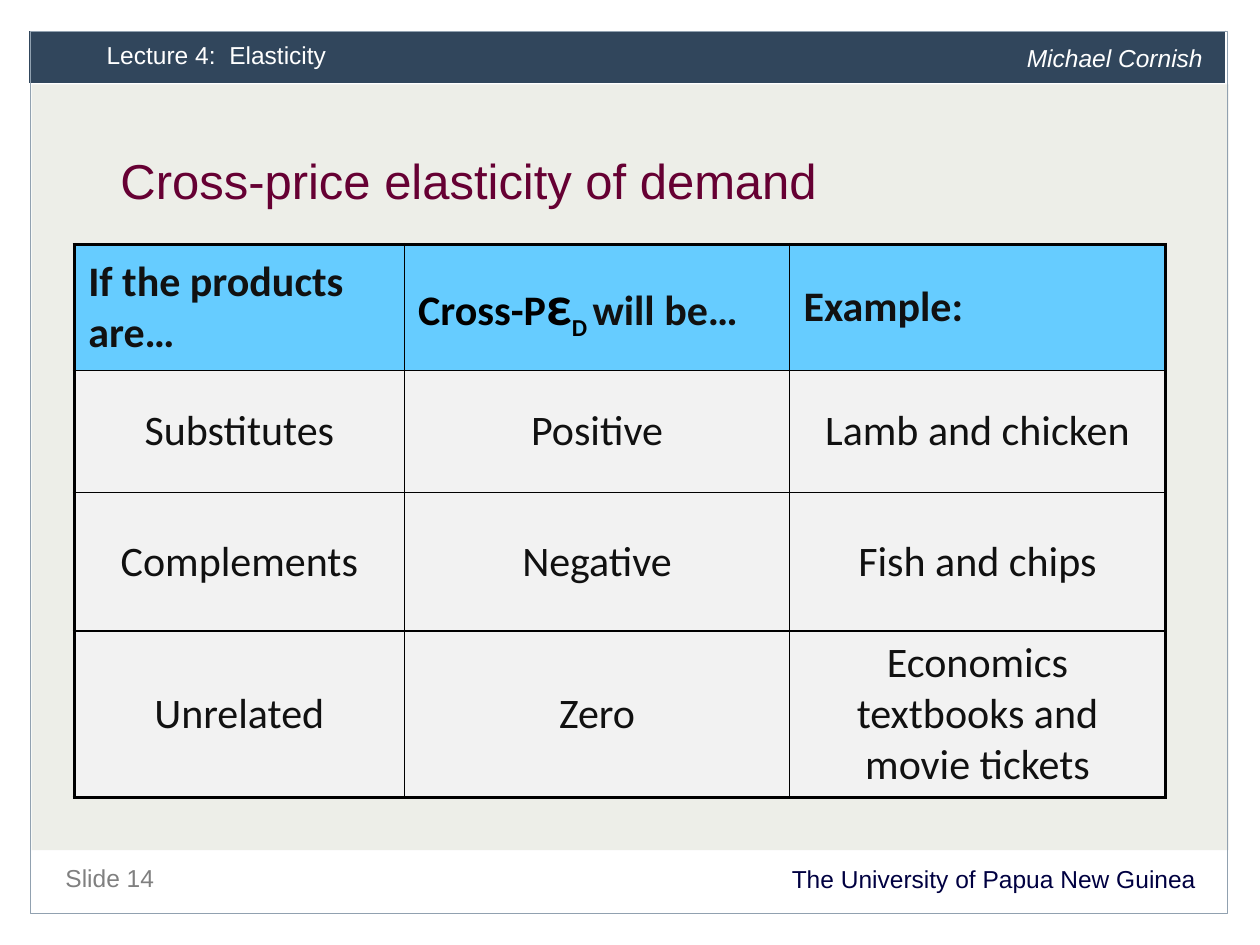
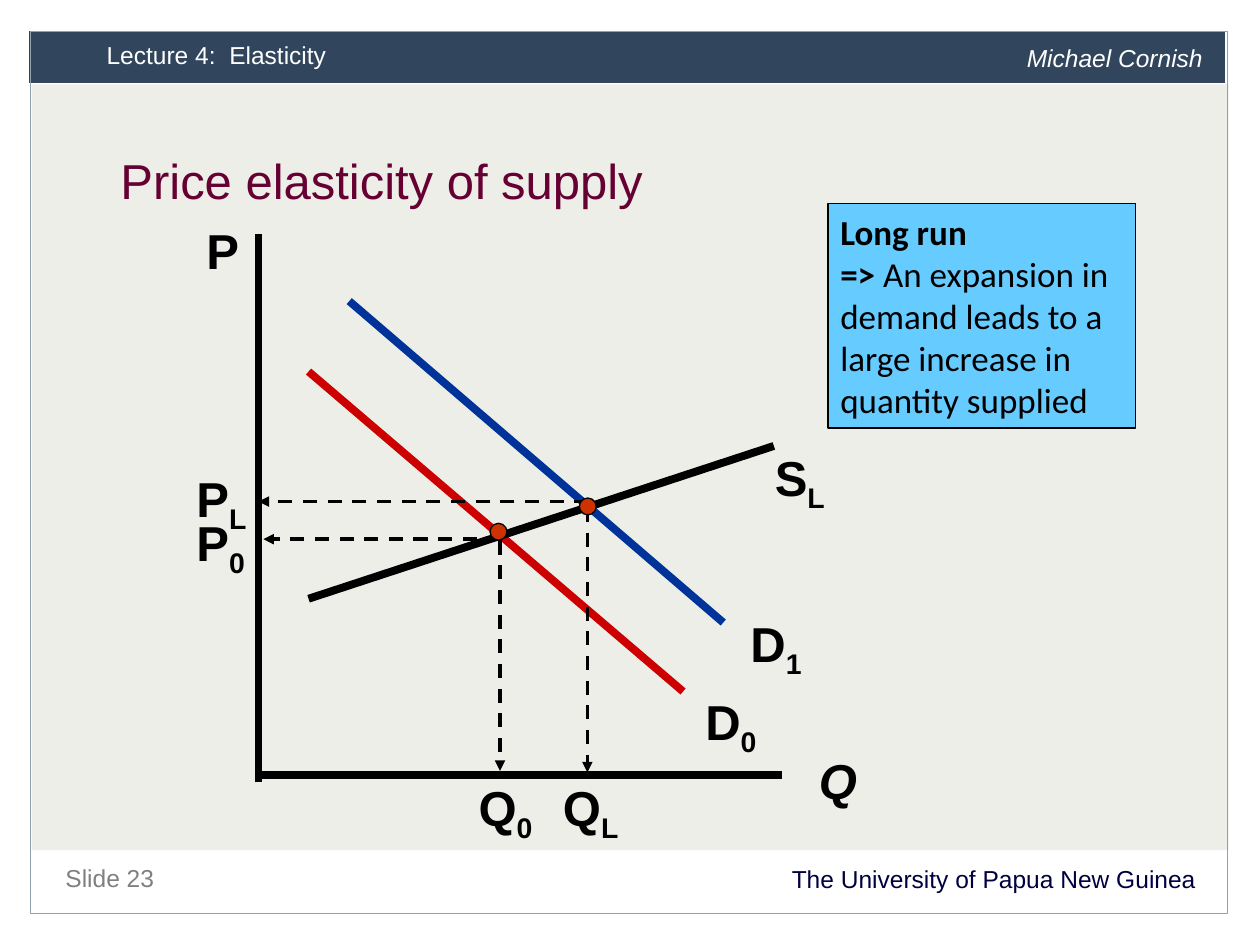
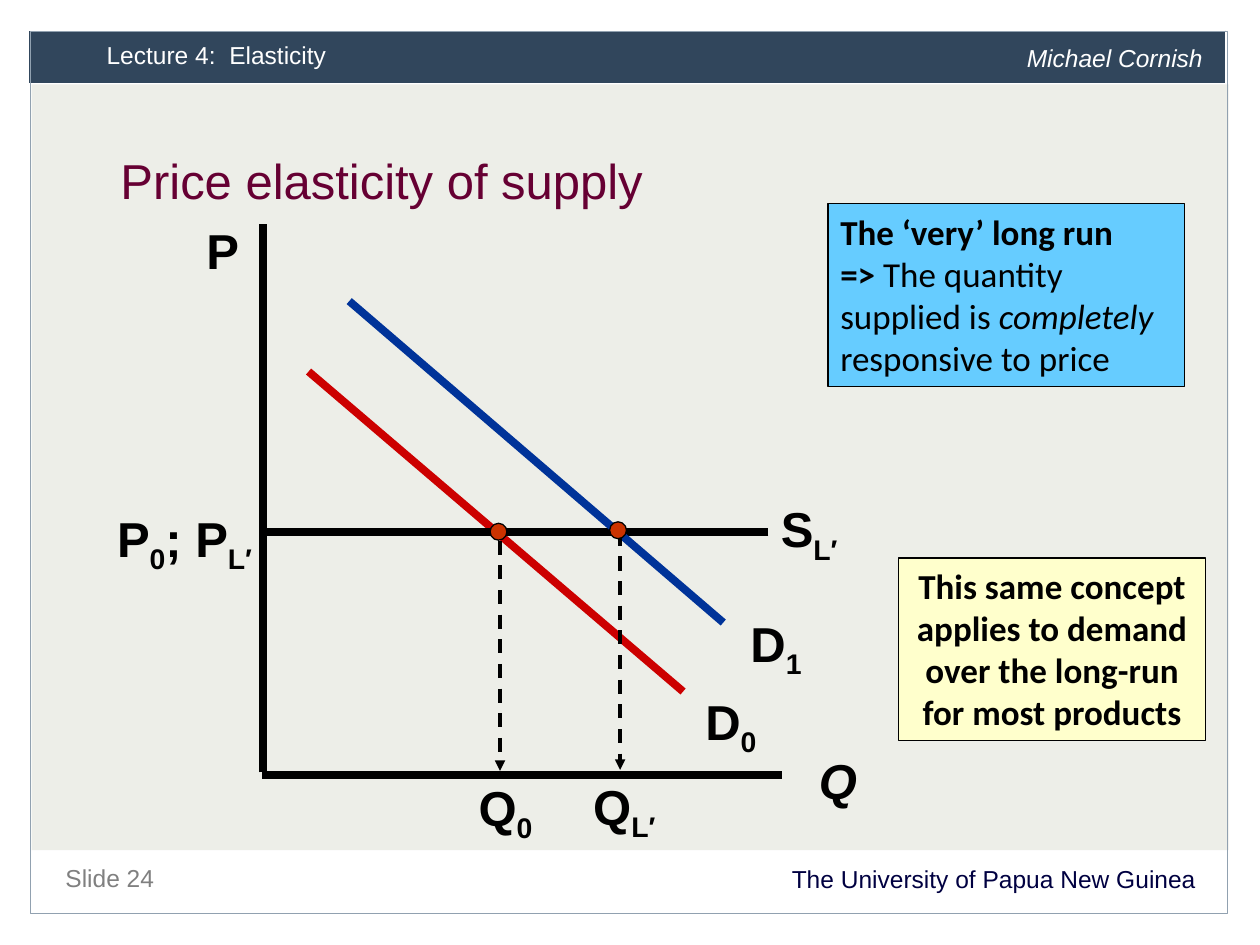
from dataclasses import dataclass

from lxml import etree
from pptx import Presentation
from pptx.dml.color import RGBColor
from pptx.enum import dml, shapes, text
from pptx.oxml import ns
from pptx.util import Cm, Pt


@dataclass(frozen=True)
class Theme:
    sans: str = "Arial"
    body: str = "Calibri"
    panel: str = "EDEEE8"
    band: str = "31465C"
    frame: str = "91A1B0"
    title: str = "660033"
    university: str = "000041"
    muted: str = "808080"
    white: str = "FFFFFF"
    black: str = "000000"
    cell_text: str = "111111"
    cell: str = "F2F2F2"
    sky: str = "66CCFF"
    cream: str = "FFFFCC"
    old_demand: str = "CC0000"
    new_demand: str = "003399"
    dot: str = "CC3300"
    small_size: int = 14
    callout_size: int = 20
    table_size: int = 24
    epsilon_size: int = 32
    large_size: int = 28
    curve_width: float = 4.5
    guide_width: float = 2
    thin_width: float = 0.75


THEME = Theme()
LEFT, CENTER, RIGHT = (text.PP_ALIGN.LEFT, text.PP_ALIGN.CENTER,
                       text.PP_ALIGN.RIGHT)
RECTANGLE = shapes.MSO_SHAPE.RECTANGLE
DOT_SIZE = 0.34


# Text helpers
def rgb(color):
    return RGBColor.from_string(color)


def write(paragraph, runs, size, color, font=THEME.sans, align=LEFT):
    """Add (words, style) runs; style letters: b bold, i italic, s subscript."""
    paragraph.alignment = align
    for words, style in runs:
        run = paragraph.add_run()
        run.text = words
        run.font.name = font
        run.font.size = Pt(size)
        run.font.color.rgb = rgb(color)
        run.font.bold = "b" in style
        run.font.italic = "i" in style
        if "s" in style:
            run._r.get_or_add_rPr().set("baseline", "-25000")


def add_text(slide, box, runs, size, color, align=LEFT, spacing=None,
             wrap=True):
    text_box = slide.shapes.add_textbox(*map(Cm, box))
    text_box.text_frame.word_wrap = wrap
    paragraph = text_box.text_frame.paragraphs[0]
    if spacing:
        paragraph.line_spacing = Pt(spacing)
    write(paragraph, runs, size, color, align=align)


# Shape helpers
def add_block(slide, kind, box, fill=None, line=None, width=THEME.thin_width):
    shape = slide.shapes.add_shape(kind, *map(Cm, box))
    shape.shadow.inherit = False
    if fill:
        shape.fill.solid()
        shape.fill.fore_color.rgb = rgb(fill)
    else:
        shape.fill.background()
    if line:
        shape.line.color.rgb = rgb(line)
        shape.line.width = Pt(width)
    else:
        shape.line.fill.background()
    return shape


def add_callout(slide, box, fill, paragraphs, align=LEFT):
    text_frame = add_block(slide, RECTANGLE, box, fill, THEME.black).text_frame
    text_frame.word_wrap = True
    text_frame.vertical_anchor = text.MSO_ANCHOR.TOP
    for index, runs in enumerate(paragraphs):
        paragraph = (text_frame.add_paragraph() if index
                     else text_frame.paragraphs[0])
        write(paragraph, runs, THEME.callout_size, THEME.black, THEME.body,
              align)


def add_line(slide, start, end, color=THEME.black, width=THEME.curve_width):
    connector = slide.shapes.add_connector(
        shapes.MSO_CONNECTOR.STRAIGHT, *map(Cm, (*start, *end)))
    connector.line.color.rgb = rgb(color)
    connector.line.width = Pt(width)
    etree.SubElement(connector._element.spPr, ns.qn("a:effectLst"))
    return connector


def add_guide(slide, start, end):
    connector = add_line(slide, start, end, width=THEME.guide_width)
    connector.line.dash_style = dml.MSO_LINE.DASH
    etree.SubElement(connector.line._get_or_add_ln(), ns.qn("a:tailEnd"),
                     type="triangle")


def add_dot(slide, x, y):
    box = (x - DOT_SIZE / 2, y - DOT_SIZE / 2, DOT_SIZE, DOT_SIZE)
    add_block(slide, shapes.MSO_SHAPE.OVAL, box, THEME.dot, THEME.black)


def add_label(slide, left, top, width, *parts, italic=False, wrap=False):
    """Parts alternate between normal text and subscript."""
    base = "bi" if italic else "b"
    runs = [(part, base + "s" * (index % 2))
            for index, part in enumerate(parts)]
    add_text(slide, (left, top, width, 1.45), runs, THEME.large_size,
             THEME.black, wrap=wrap)


# Parts on every slide
def add_base_slide(presentation, number, title):
    slide = presentation.slides.add_slide(presentation.slide_layouts[6])
    add_block(slide, RECTANGLE, (0.64, 1.7, 24.13, 15.44), THEME.panel)
    add_block(slide, RECTANGLE, (0.58, 0.61, 24.13, 1.07), THEME.band,
              THEME.white, 0.5)
    small = THEME.small_size
    add_text(slide, (1.07, 17.35, 23.29, 0.81),
             [("The University of Papua New Guinea", "")], small,
             THEME.university, RIGHT, 15)
    add_text(slide, (1.07, 17.15, 11, 0.86), [(f"Slide {number}", "")], small,
             THEME.muted, spacing=20)
    add_text(slide, (1.9, 0.64, 15.57, 0.94),
             [("Lecture 4:  Elasticity", "")], small, THEME.white, spacing=18)
    add_block(slide, RECTANGLE, (0.61, 0.64, 24.13, 17.78), line=THEME.frame)
    add_text(slide, (20.45, 0.71, 4.17, 0.94), [("Michael Cornish", "i")],
             small, THEME.white, spacing=18)
    add_text(slide, (2.18, 3.18, 20.65, 1.9), [(title, "")], THEME.large_size,
             THEME.title, spacing=26)
    return slide


# Table
def set_borders(cell, widths):
    properties = cell._tc.get_or_add_tcPr()
    for side, width in zip("LRTB", widths):
        line = etree.SubElement(properties, ns.qn(f"a:ln{side}"),
                                w=str(Pt(width)))
        fill = etree.SubElement(line, ns.qn("a:solidFill"))
        etree.SubElement(fill, ns.qn("a:srgbClr"), val=THEME.black)


def add_elasticity_table(slide):
    header = [
        [("If the products are…", "b")],
        [("Cross-P", "b"), ("ε", "b"), ("D ", "bs"), ("will be…", "b")],
        [("Example:", "b")],
    ]
    body = [
        ("Substitutes", "Positive", "Lamb and chicken"),
        ("Complements", "Negative", "Fish and chips"),
        ("Unrelated", "Zero", "Economics textbooks and movie tickets"),
    ]
    rows = [header] + [[[(words, "")] for words in row] for row in body]
    widths, heights = (6.65, 7.77, 7.57), (2.54, 2.46, 2.79, 3.36)
    table = slide.shapes.add_table(
        len(rows), len(widths), Cm(1.5), Cm(4.93), Cm(sum(widths)),
        Cm(sum(heights))).table
    for column, width in zip(table.columns, widths):
        column.width = Cm(width)
    for row, height in zip(table.rows, heights):
        row.height = Cm(height)

    last_row, last_column = len(rows) - 1, len(widths) - 1
    for r, row in enumerate(rows):
        for c, runs in enumerate(row):
            cell = table.cell(r, c)
            on_edge = (c == 0, c == last_column, r == 0, r == last_row)
            set_borders(cell, [2.25 if edge else 1 for edge in on_edge])
            cell.fill.solid()
            cell.fill.fore_color.rgb = rgb(THEME.cell if r else THEME.sky)
            cell.vertical_anchor = text.MSO_ANCHOR.MIDDLE
            cell.margin_left = cell.margin_right = Cm(0.28)
            write(cell.text_frame.paragraphs[0], runs, THEME.table_size,
                  THEME.cell_text, THEME.body, CENTER if r else LEFT)

    # The elasticity symbol is black, with a larger epsilon
    symbol = table.cell(0, 1).text_frame.paragraphs[0].runs[:3]
    for run in symbol:
        run.font.color.rgb = rgb(THEME.black)
    symbol[1].font.size = Pt(THEME.epsilon_size)


# Supply and demand diagram
def add_diagram(slide, price_axis, supply, guides, new_equilibrium):
    add_line(slide, (6.22, 7.49), (13.77, 13.94), THEME.old_demand)
    add_line(slide, *supply)
    add_line(slide, (5.28, 15.62), (15.77, 15.62))
    add_line(slide, *price_axis)
    add_line(slide, (7.04, 6.07), (14.58, 12.55), THEME.new_demand)
    for start, end in [((10.08, 10.9), (10.08, 15.54)), *guides]:
        add_guide(slide, start, end)
    add_dot(slide, 10.05, 10.72)
    add_dot(slide, *new_equilibrium)
    add_label(slide, 3.91, 4.32, 1.17, "P")
    add_label(slide, 16.26, 15.01, 1.27, "Q", italic=True)
    add_label(slide, 13.97, 13.82, 1.6, "D", "0")
    add_label(slide, 14.88, 12.24, 1.6, "D", "1")
    add_label(slide, 9.4, 15.54, 1.65, "Q", "0")


def add_long_run(slide):
    add_callout(slide, (16.69, 4.11, 6.2, 4.52), THEME.sky, [
        [("Long run", "b")],
        [("=> ", "b"), ("An expansion in demand leads to a large increase in "
                        "quantity supplied", "")],
    ])
    add_diagram(
        slide,
        price_axis=((5.21, 15.77), (5.21, 4.72)),
        supply=((15.6, 8.99), (6.22, 12.07)),
        guides=[((11.86, 10.11), (5.21, 10.11)),
                ((11.84, 10.24), (11.84, 15.57)),
                ((10.11, 10.87), (5.31, 10.87))],
        new_equilibrium=(11.85, 10.21))
    add_label(slide, 3.71, 10.21, 1.57, "P", "0")
    add_label(slide, 3.71, 9.32, 1.57, "P", "L")
    add_label(slide, 15.37, 8.89, 1.57, "S", "L")
    add_label(slide, 11.1, 15.54, 1.8, "Q", "L", wrap=True)


def add_very_long_run(slide):
    add_callout(slide, (16.69, 4.11, 7.19, 3.68), THEME.sky, [
        [("The ‘very’ long run", "b")],
        [("=> ", "b"), ("The quantity supplied is ", ""), ("completely", "i"),
         (" responsive to price", "")],
    ])
    add_diagram(
        slide,
        price_axis=((5.31, 15.57), (5.31, 4.52)),
        supply=((15.49, 10.72), (5.31, 10.72)),
        guides=[((12.5, 10.72), (12.5, 15.52))],
        new_equilibrium=(12.46, 10.69))
    add_label(slide, 2.11, 10.13, 3.61, "P", "0", "; P", "L′", wrap=True)
    add_label(slide, 15.49, 9.93, 1.73, "S", "L′")
    add_label(slide, 11.71, 15.52, 2.01, "Q", "L′", wrap=True)
    add_callout(slide, (18.11, 11.25, 6.2, 3.68), THEME.cream, [
        [("This same concept applies to demand over the long-run for most "
          "products", "b")],
    ], CENTER)


def main():
    presentation = Presentation()
    presentation.slide_width, presentation.slide_height = Cm(25.4), Cm(19.05)
    add_elasticity_table(
        add_base_slide(presentation, 14, "Cross-price elasticity of demand"))
    supply_title = "Price elasticity of supply"
    add_long_run(add_base_slide(presentation, 23, supply_title))
    add_very_long_run(add_base_slide(presentation, 24, supply_title))
    presentation.save("out.pptx")


if __name__ == "__main__":
    main()
